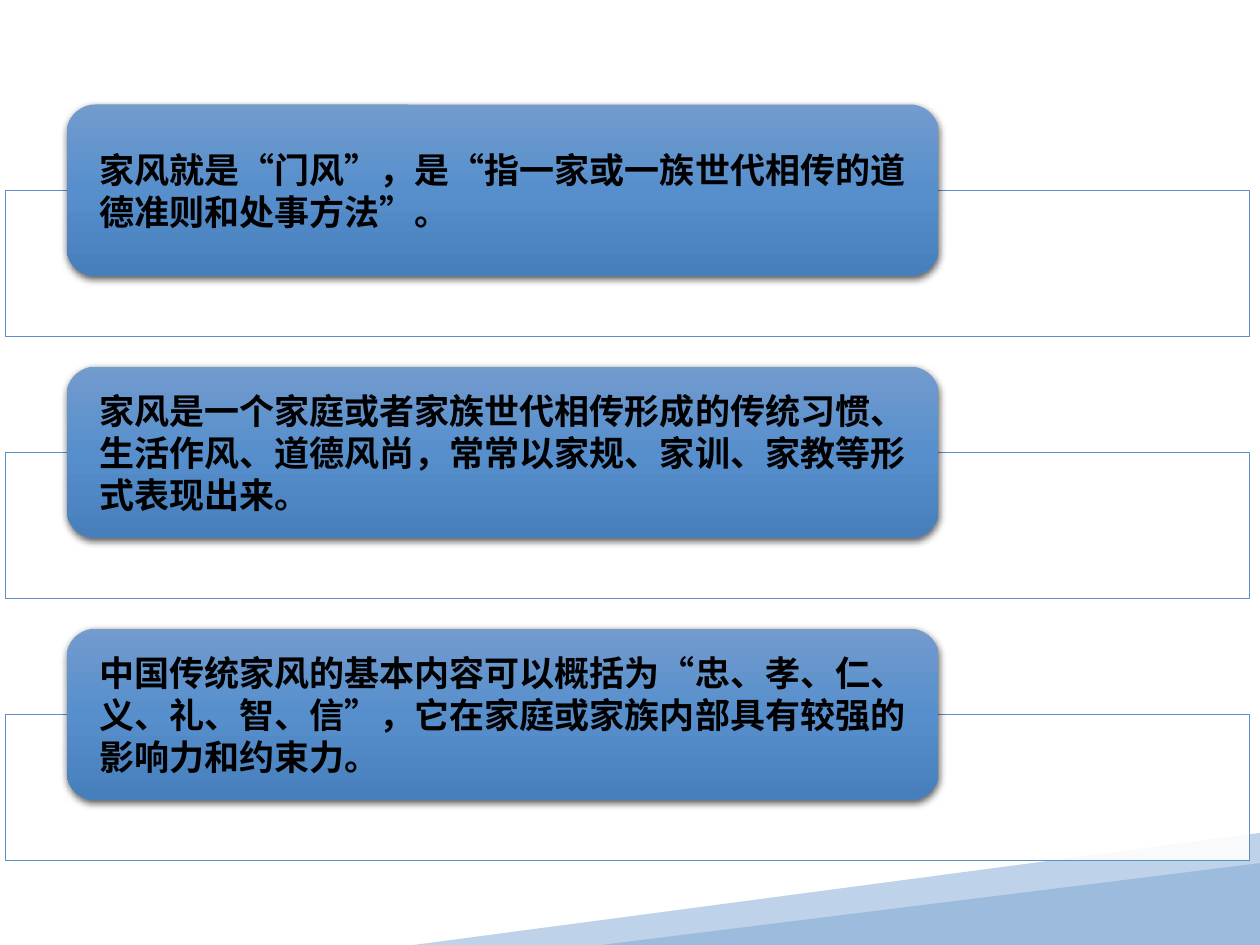
import copy
import pptx
import pptx.util
import pptx.dml.color
import pptx.enum.shapes
import pptx.enum.text
import pptx.oxml.ns
import lxml.etree

Inches = pptx.util.Inches
Pt = pptx.util.Pt
RGBColor = pptx.dml.color.RGBColor
SHAPE = pptx.enum.shapes.MSO_SHAPE
qn = pptx.oxml.ns.qn

WHITE = RGBColor(0xFF, 0xFF, 0xFF)
BLACK = RGBColor(0x00, 0x00, 0x00)
PALE = RGBColor(0xBE, 0xD2, 0xE9)
MID = RGBColor(0x9D, 0xBC, 0xDD)
EDGE = RGBColor(0x5C, 0x8F, 0xC7)
SHADES = [
    (0, RGBColor(0x72, 0x9B, 0xCE)),
    (0.5, RGBColor(0x57, 0x8F, 0xCC)),
    (1, RGBColor(0x47, 0x7F, 0xBC)),
]
FONT = "Noto Sans CJK SC"
TOP, STEP = 0.83, 2.08
NOTES = [
    "家风就是“门风”，是“指一家或一族世代相传的道德准则和处事方法”。",
    "家风是一个家庭或者家族世代相传形成的传统习惯、生活作风、道德风尚，常常以家规、家训、家教等形式表现出来。",
    "中国传统家风的基本内容可以概括为“忠、孝、仁、义、礼、智、信”，它在家庭或家族内部具有较强的影响力和约束力。",
]


def add_node(parent, tag, **attrs):
    node = lxml.etree.SubElement(parent, qn(tag))
    for key, value in attrs.items():
        node.set(key, str(value))
    return node


def paint(shape, color):
    shape.shadow.inherit = False
    shape.fill.solid()
    shape.fill.fore_color.rgb = color
    shape.line.fill.background()


def add_shape(slide, kind, left, top, width, height):
    return slide.shapes.add_shape(
        kind, Inches(left), Inches(top), Inches(width), Inches(height))


def add_waves(slide):
    path = [(10, 6.61), (10, 7.44), (6.73, 7.5), (3.28, 7.5)]
    points = [(Inches(x), Inches(y)) for x, y in path]
    form = slide.shapes.build_freeform(*points[0])
    form.add_line_segments(points[1:], close=True)
    paint(form.convert_to_shape(), PALE)
    wedge = add_shape(slide, SHAPE.ISOSCELES_TRIANGLE, 4.77, 6.85, 5.23, 0.65)
    wedge.adjustments[0] = 1
    paint(wedge, MID)


def add_frame(slide, top):
    frame = add_shape(slide, SHAPE.RECTANGLE, 0.04, top, 9.88, 1.16)
    paint(frame, WHITE)
    color = frame._element.spPr.find(".//" + qn("a:srgbClr"))
    add_node(color, "a:alpha", val=90000)
    frame.line.color.rgb = EDGE
    frame.line.width = Pt(0.5)


def shade(shape):
    shape.fill.gradient()
    shape.fill.gradient_angle = 270
    stops = shape._element.spPr.find(".//" + qn("a:gsLst"))
    stops.append(copy.deepcopy(stops[0]))
    for stop, (place, color) in zip(shape.fill.gradient_stops, SHADES):
        stop.position = place
        stop.color.rgb = color


def add_shadow(shape):
    shape.shadow.inherit = False
    effects = shape._element.spPr.find(qn("a:effectLst"))
    outer = add_node(effects, "a:outerShdw", blurRad=Pt(4.5), dist=Pt(1.5),
                     dir=5400000, algn="ctr", rotWithShape=0)
    color = add_node(outer, "a:srgbClr", val=BLACK)
    add_node(color, "a:alpha", val=63000)


def write(shape, text):
    frame = shape.text_frame
    frame.word_wrap = True
    frame.vertical_anchor = pptx.enum.text.MSO_ANCHOR.MIDDLE
    frame.margin_left = frame.margin_right = Inches(0.19)
    frame.margin_top = frame.margin_bottom = 0
    para = frame.paragraphs[0]
    para.text = text
    para.alignment = pptx.enum.text.PP_ALIGN.LEFT
    font = para.font
    font.name = FONT
    font.size = Pt(20)
    font.bold = True
    font.color.rgb = BLACK
    add_node(para._p.pPr.find(qn("a:defRPr")), "a:ea", typeface=FONT)


def add_card(slide, top, text):
    card = add_shape(slide, SHAPE.ROUNDED_RECTANGLE, 0.53, top, 6.92, 1.36)
    shade(card)
    card.line.fill.background()
    add_shadow(card)
    write(card, text)


def main():
    deck = pptx.Presentation()
    deck.slide_width = Inches(10)
    deck.slide_height = Inches(7.5)
    slide = deck.slides.add_slide(deck.slide_layouts[6])
    add_waves(slide)
    for row, text in enumerate(NOTES):
        top = TOP + row * STEP
        add_frame(slide, top + 0.68)
        add_card(slide, top, text)
    deck.save("out.pptx")


if __name__ == "__main__":
    main()
